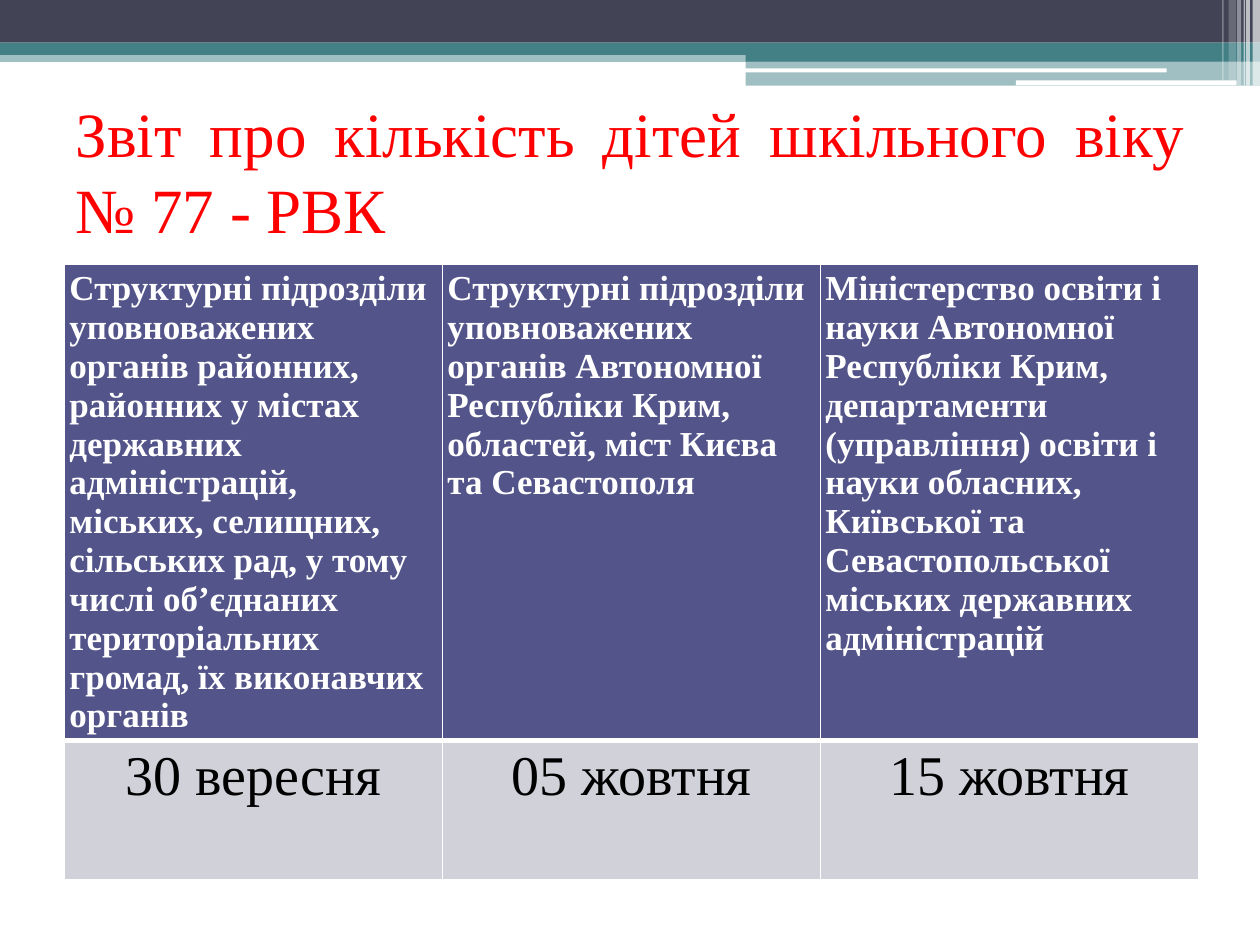
"""Build the slide on the deadlines of the school-age children report."""
from lxml.etree import SubElement
from pptx import Presentation
from pptx.dml.color import RGBColor
from pptx.enum.shapes import MSO_SHAPE
from pptx.enum.text import MSO_ANCHOR, MSO_AUTO_SIZE, PP_ALIGN
from pptx.oxml.ns import qn
from pptx.util import Cm, Pt

WHITE = RGBColor(0xFF, 0xFF, 0xFF)
BLACK = RGBColor(0x00, 0x00, 0x00)
RED = RGBColor(0xFF, 0x00, 0x00)
SLATE = RGBColor(0x42, 0x44, 0x56)
TEAL = RGBColor(0x43, 0x80, 0x86)
INDIGO = RGBColor(0x53, 0x54, 0x8A)
PALE_GREY = RGBColor(0xD1, 0xD1, 0xDA)

TITLE = "Звіт про кількість дітей шкільного віку № 77 - РВК"
RECIPIENTS = [
    "Структурні підрозділи уповноважених органів районних, районних у містах "
    "державних адміністрацій, міських, селищних, сільських рад, у тому числі "
    "об’єднаних територіальних громад, їх виконавчих органів",
    "Структурні підрозділи уповноважених органів Автономної Республіки Крим, "
    "областей, міст Києва та Севастополя",
    "Міністерство освіти і науки Автономної Республіки Крим, департаменти "
    "(управління) освіти і науки обласних, Київської та Севастопольської\n"
    "міських державних адміністрацій",
]
DEADLINES = ["30 вересня", "05 жовтня", "15 жовтня"]

BANDS = [
    (0, 1.02, 25.4, 0.23, TEAL, 50),
    (0, 0, 25.4, 0.86, SLATE, 100),
    (0, 0.86, 25.4, 0.25, TEAL, 100),
    (15.03, 0.99, 10.37, 0.25, TEAL, 100),
    (15.03, 1.23, 10.37, 0.5, TEAL, 50),
]
HIGHLIGHTS = [(15.01, 1.38, 8.51, 0.08), (20.48, 1.62, 4.45, 0.1)]
STRIPES = [
    (25.25, 0.15, 1.73, 65),
    (25.12, 0.08, 1.73, 65),
    (25.07, 0.03, 1.73, 60),
    (24.94, 0.08, 1.73, 40),
    (24.77, 0.15, 1.63, 20),
    (24.64, 0.03, 1.63, 30),
]


def write_text(frame, text, size, color, bold=False, align=PP_ALIGN.LEFT,
               font="Times New Roman"):
    """Fill a text frame with one formatted paragraph per line of text."""
    frame.word_wrap = True
    for index, line in enumerate(text.split("\n")):
        paragraph = frame.add_paragraph() if index else frame.paragraphs[0]
        paragraph.alignment = align
        run = paragraph.add_run()
        run.text = line
        run.font.name = font
        run.font.size = Pt(size)
        run.font.bold = bold
        run.font.color.rgb = color


class SlideBuilder:
    """Hold the style and the current slide."""

    def __init__(self, slide, border_color=WHITE, cell_margin=0.1):
        self.slide = slide
        self.border_color = border_color
        self.cell_margin = Cm(cell_margin)

    def add_band(self, left, top, width, height, color, opacity=100,
                 kind=MSO_SHAPE.RECTANGLE):
        """Add a borderless bar, translucent when opacity is below 100."""
        shape = self.slide.shapes.add_shape(
            kind, Cm(left), Cm(top), Cm(width), Cm(height))
        shape.shadow.inherit = False
        shape.line.fill.background()
        shape.fill.solid()
        shape.fill.fore_color.rgb = color
        if opacity < 100:
            tint = next(shape.fill._xPr.iter(qn("a:srgbClr")))
            SubElement(tint, qn("a:alpha"), val=str(opacity * 1000))

    def set_title(self, text, left, top, width, height):
        """Place and format the title placeholder."""
        title = self.slide.shapes.title
        title.left, title.top = Cm(left), Cm(top)
        title.width, title.height = Cm(width), Cm(height)
        frame = title.text_frame
        frame.auto_size = MSO_AUTO_SIZE.NONE
        frame.vertical_anchor = MSO_ANCHOR.MIDDLE
        write_text(frame, text, size=36, color=RED, align=PP_ALIGN.JUSTIFY)

    def set_borders(self, cell, **widths):
        """Draw the four cell borders with the given widths in points."""
        properties = cell._tc.get_or_add_tcPr()
        for index, side in enumerate("LRTB"):
            line = SubElement(properties, qn(f"a:ln{side}"),
                              w=str(Pt(widths.get(side, 1))))
            fill = SubElement(line, qn("a:solidFill"))
            SubElement(fill, qn("a:srgbClr"), val=str(self.border_color))
            properties.insert(index, line)

    def add_table(self, left, top, width, rows):
        """Add a table from rows of texts, height, fill, borders and format."""
        columns = len(rows[0]["texts"])
        height = Cm(sum(row["height"] for row in rows))
        table = self.slide.shapes.add_table(
            len(rows), columns, Cm(left), Cm(top), Cm(width), height).table
        for row_index, row in enumerate(rows):
            table.rows[row_index].height = Cm(row["height"])
            for column, text in enumerate(row["texts"]):
                cell = table.cell(row_index, column)
                cell.margin_left = cell.margin_right = self.cell_margin
                cell.margin_top = cell.margin_bottom = self.cell_margin
                cell.fill.solid()
                cell.fill.fore_color.rgb = row["fill"]
                self.set_borders(cell, **row["borders"])
                write_text(cell.text_frame, text, **row["format"])


def main():
    """Create and save the presentation."""
    presentation = Presentation()
    presentation.slide_width, presentation.slide_height = Cm(25.4), Cm(19.05)
    builder = SlideBuilder(
        presentation.slides.add_slide(presentation.slide_layouts[5]))

    for band in BANDS:
        builder.add_band(*band)
    for highlight in HIGHLIGHTS:
        builder.add_band(*highlight, WHITE, kind=MSO_SHAPE.ROUNDED_RECTANGLE)
    for left, width, height, opacity in STRIPES:
        builder.add_band(left, 0, width, height, WHITE, opacity)

    builder.set_title(TITLE, 1.27, 1.93, 22.86, 3)
    builder.add_table(1.3, 5.33, 22.86, [
        {"texts": RECIPIENTS, "height": 9.6, "fill": INDIGO,
         "borders": {"B": 3},
         "format": {"size": 20, "color": WHITE, "bold": True}},
        {"texts": DEADLINES, "height": 2.8, "fill": PALE_GREY,
         "borders": {"T": 3},
         "format": {"size": 32, "color": BLACK, "align": PP_ALIGN.CENTER}},
    ])
    presentation.save("out.pptx")


if __name__ == "__main__":
    main()
